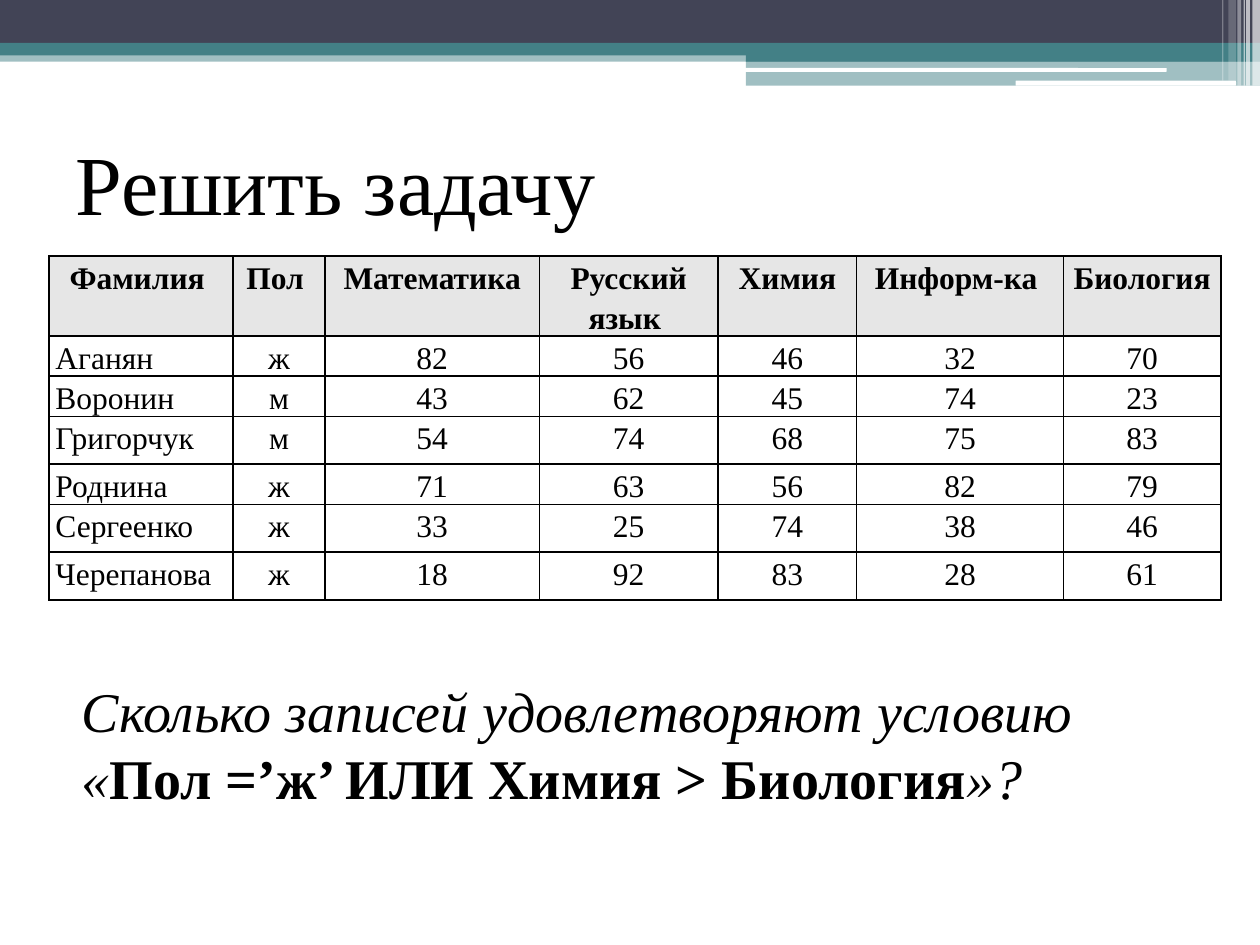
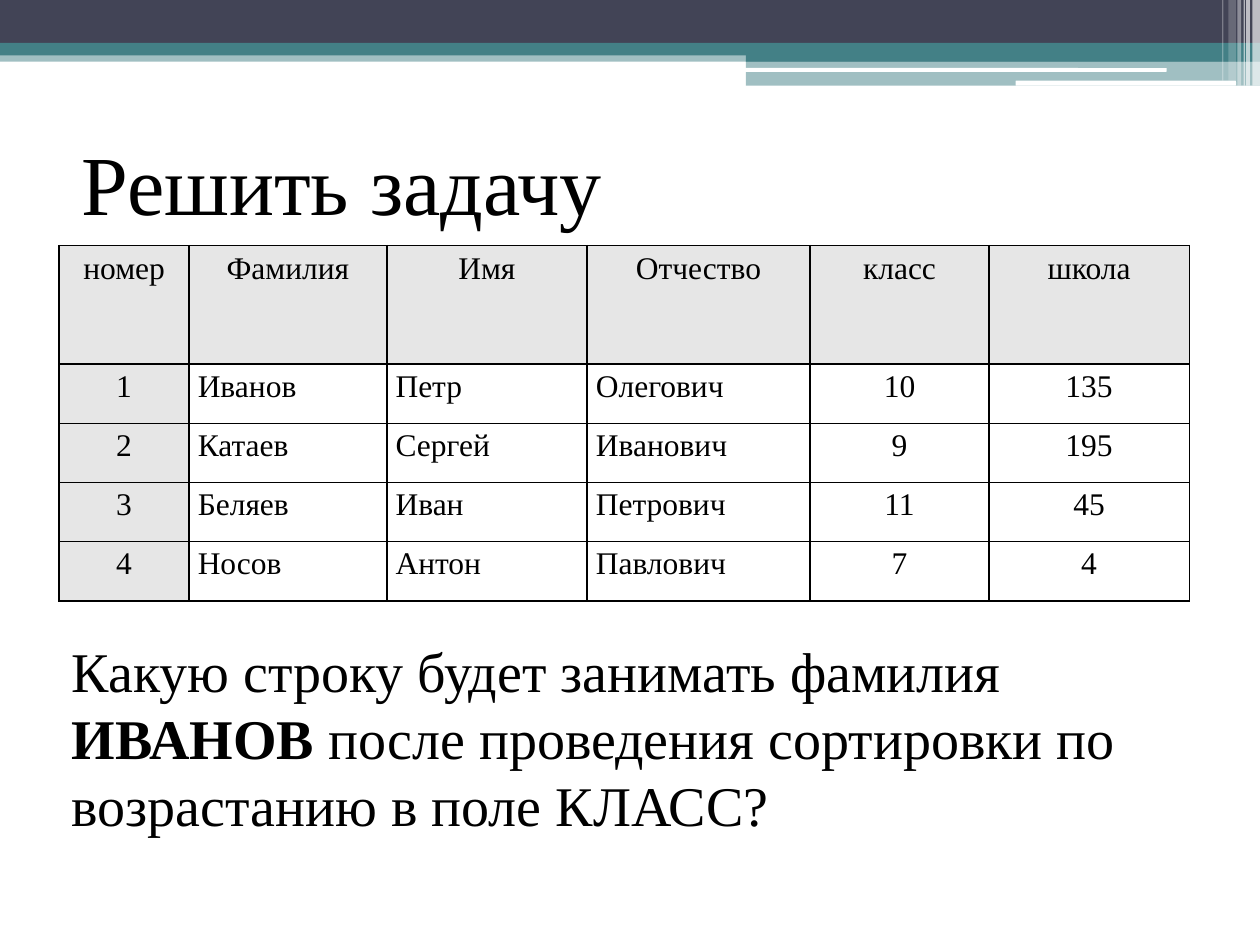
"""Build two database exercise slides, each with a table and a question."""
import dataclasses

import lxml.etree
import pptx
import pptx.dml.color
import pptx.enum.shapes
import pptx.enum.text
import pptx.oxml.ns
import pptx.util

Inches = pptx.util.Inches
Pt = pptx.util.Pt
Align = pptx.enum.text.PP_ALIGN
Anchor = pptx.enum.text.MSO_ANCHOR
Fit = pptx.enum.text.MSO_AUTO_SIZE
Shape = pptx.enum.shapes.MSO_SHAPE
qn = pptx.oxml.ns.qn


@dataclasses.dataclass(frozen=True)
class Theme:
    font: str = "Times New Roman"
    ink: str = "000000"
    navy: str = "424456"
    teal: str = "438086"
    white: str = "FFFFFF"
    header: str = "E6E6E6"
    title_size: int = 48
    question_size: int = 32
    cell_size: int = 18
    cell_spacing: float = 1.15
    border: int = 1


theme = Theme()


def style_run(span, size, bold=False, italic=False):
    span.font.name = theme.font
    span.font.size = Pt(size)
    span.font.bold = bold
    span.font.italic = italic
    span.font.color.rgb = pptx.dml.color.RGBColor.from_string(theme.ink)


def draw_border(cell):
    properties = cell._tc.get_or_add_tcPr()
    for side in ("lnL", "lnR", "lnT", "lnB"):
        line = lxml.etree.SubElement(properties, qn(f"a:{side}"), w=str(Pt(theme.border)))
        fill = lxml.etree.SubElement(line, qn("a:solidFill"))
        lxml.etree.SubElement(fill, qn("a:srgbClr"), val=theme.ink)


bands = [
    (Shape.RECTANGLE, 0, 0.4, 10, 0.09, theme.teal, 50),
    (Shape.RECTANGLE, 0, 0, 10, 0.34, theme.navy, 100),
    (Shape.RECTANGLE, 0, 0.34, 10, 0.1, theme.teal, 100),
    (Shape.RECTANGLE, 5.92, 0.39, 4.08, 0.1, theme.teal, 100),
    (Shape.RECTANGLE, 5.92, 0.48, 4.08, 0.2, theme.teal, 50),
    (Shape.ROUNDED_RECTANGLE, 5.91, 0.54, 3.35, 0.03, theme.white, 100),
    (Shape.ROUNDED_RECTANGLE, 8.06, 0.64, 1.75, 0.04, theme.white, 100),
    (Shape.RECTANGLE, 9.94, 0, 0.06, 0.68, theme.white, 65),
    (Shape.RECTANGLE, 9.89, 0, 0.03, 0.68, theme.white, 65),
    (Shape.RECTANGLE, 9.87, 0, 0.01, 0.68, theme.white, 60),
    (Shape.RECTANGLE, 9.82, 0, 0.03, 0.68, theme.white, 40),
    (Shape.RECTANGLE, 9.75, 0, 0.06, 0.64, theme.white, 20),
    (Shape.RECTANGLE, 9.7, 0, 0.01, 0.64, theme.white, 30),
]

exercises = [
    {
        "title_left": 0.5,
        "table_place": (0.39, 2.03),
        "columns": [1.46, 0.73, 1.7, 1.42, 1.1, 1.64, 1.25],
        "heights": [0.51, 0.25, 0.25, 0.38, 0.25, 0.38, 0.38],
        "margin": 0.05,
        "bold_header": True,
        "shaded_columns": [],
        "left_columns": [0],
        "rows": [
            ["Фамилия ", "Пол ", "Математика", "Русский язык ", "Химия", "Информ-ка ", "Биология "],
            ["Аганян", "ж", "82", "56", "46", "32", "70"],
            ["Воронин", "м", "43", "62", "45", "74", "23"],
            ["Григорчук", "м", "54", "74", "68", "75", "83"],
            ["Роднина", "ж", "71", "63", "56", "82", "79"],
            ["Сергеенко", "ж", "33", "25", "74", "38", "46"],
            ["Черепанова", "ж", "18", "92", "83", "28", "61"],
        ],
        "question_place": (0.55, 5.31, 8.98, 1.18),
        "question_anchor": Anchor.MIDDLE,
        "question": [
            ("Сколько записей удовлетворяют условию «", False, True),
            ("Пол =’ж’ ИЛИ Химия > Биология", True, False),
            ("»?", False, True),
        ],
    },
    {
        "title_left": 0.55,
        "table_place": (0.47, 1.95),
        "columns": [1.03, 1.57, 1.59, 1.77, 1.42, 1.59],
        "heights": [0.94, 0.47, 0.47, 0.47, 0.47],
        "margin": 0.07,
        "bold_header": False,
        "shaded_columns": [0],
        "left_columns": [1, 2, 3],
        "rows": [
            ["номер", "Фамилия", "Имя", "Отчество", "класс", "школа"],
            ["1", "Иванов", "Петр", "Олегович", "10", "135"],
            ["2", "Катаев", "Сергей", "Иванович", "9", "195"],
            ["3", "Беляев", "Иван", "Петрович", "11", "45"],
            ["4", "Носов", "Антон", "Павлович", "7", "4"],
        ],
        "question_place": (0.47, 5, 8.98, 1.72),
        "question_anchor": Anchor.TOP,
        "question": [
            ("Какую строку будет занимать фамилия ", False, False),
            ("ИВАНОВ", True, False),
            (" после проведения сортировки по возрастанию в поле КЛАСС?", False, False),
        ],
    },
]

deck = pptx.Presentation()
deck.slide_width = Inches(10)
deck.slide_height = Inches(7.5)
title_only = deck.slide_layouts.get_by_name("Title Only")
pages = [deck.slides.add_slide(title_only) for _ in exercises]

master_tree = deck.slide_master.shapes.element
for index, (kind, left, top, width, height, color, opacity) in enumerate(bands):
    band = pages[0].shapes.add_shape(
        kind, Inches(left), Inches(top), Inches(width), Inches(height))
    band.shadow.inherit = False
    band.line.fill.background()
    band.fill.solid()
    band.fill.fore_color.rgb = pptx.dml.color.RGBColor.from_string(color)
    if opacity < 100:
        tint = band.element.find(".//" + qn("a:srgbClr"))
        lxml.etree.SubElement(tint, qn("a:alpha"), val=str(opacity * 1000))
    band.element.nvSpPr.cNvPr.set("id", str(100 + index))
    master_tree.insert(2 + index, band.element)

for page, exercise in zip(pages, exercises):
    title = page.shapes.title
    title.left, title.top = Inches(exercise["title_left"]), Inches(0.86)
    title.width, title.height = Inches(9), Inches(1.17)
    title.text_frame.text = "Решить задачу"
    title.text_frame.auto_size = Fit.NONE
    title.text_frame.vertical_anchor = Anchor.MIDDLE
    title.text_frame.paragraphs[0].alignment = Align.LEFT
    style_run(title.text_frame.paragraphs[0].runs[0], theme.title_size)

    rows, columns, heights = exercise["rows"], exercise["columns"], exercise["heights"]
    left, top = exercise["table_place"]
    table = page.shapes.add_table(
        len(rows), len(columns), Inches(left), Inches(top),
        Inches(sum(columns)), Inches(sum(heights))).table
    table.first_row = False
    table.horz_banding = False
    for column, width in zip(table.columns, columns):
        column.width = Inches(width)
    for row, height in zip(table.rows, heights):
        row.height = Inches(height)

    for row_index, values in enumerate(rows):
        for column_index, value in enumerate(values):
            is_header = row_index == 0
            cell = table.cell(row_index, column_index)
            cell.margin_left = cell.margin_right = Inches(exercise["margin"])
            cell.margin_top = cell.margin_bottom = 0
            draw_border(cell)
            if is_header or column_index in exercise["shaded_columns"]:
                cell.fill.solid()
                cell.fill.fore_color.rgb = pptx.dml.color.RGBColor.from_string(theme.header)
            else:
                cell.fill.background()
            cell.text_frame.text = value
            para = cell.text_frame.paragraphs[0]
            para.line_spacing = theme.cell_spacing
            is_left = column_index in exercise["left_columns"] and not is_header
            para.alignment = Align.LEFT if is_left else Align.CENTER
            style_run(para.runs[0], theme.cell_size, is_header and exercise["bold_header"])

    box = page.shapes.add_textbox(*map(Inches, exercise["question_place"]))
    box.text_frame.word_wrap = True
    box.text_frame.auto_size = Fit.SHAPE_TO_FIT_TEXT
    box.text_frame.vertical_anchor = exercise["question_anchor"]
    para = box.text_frame.paragraphs[0]
    for words, bold, italic in exercise["question"]:
        span = para.add_run()
        span.text = words
        style_run(span, theme.question_size, bold, italic)

deck.save("out.pptx")
